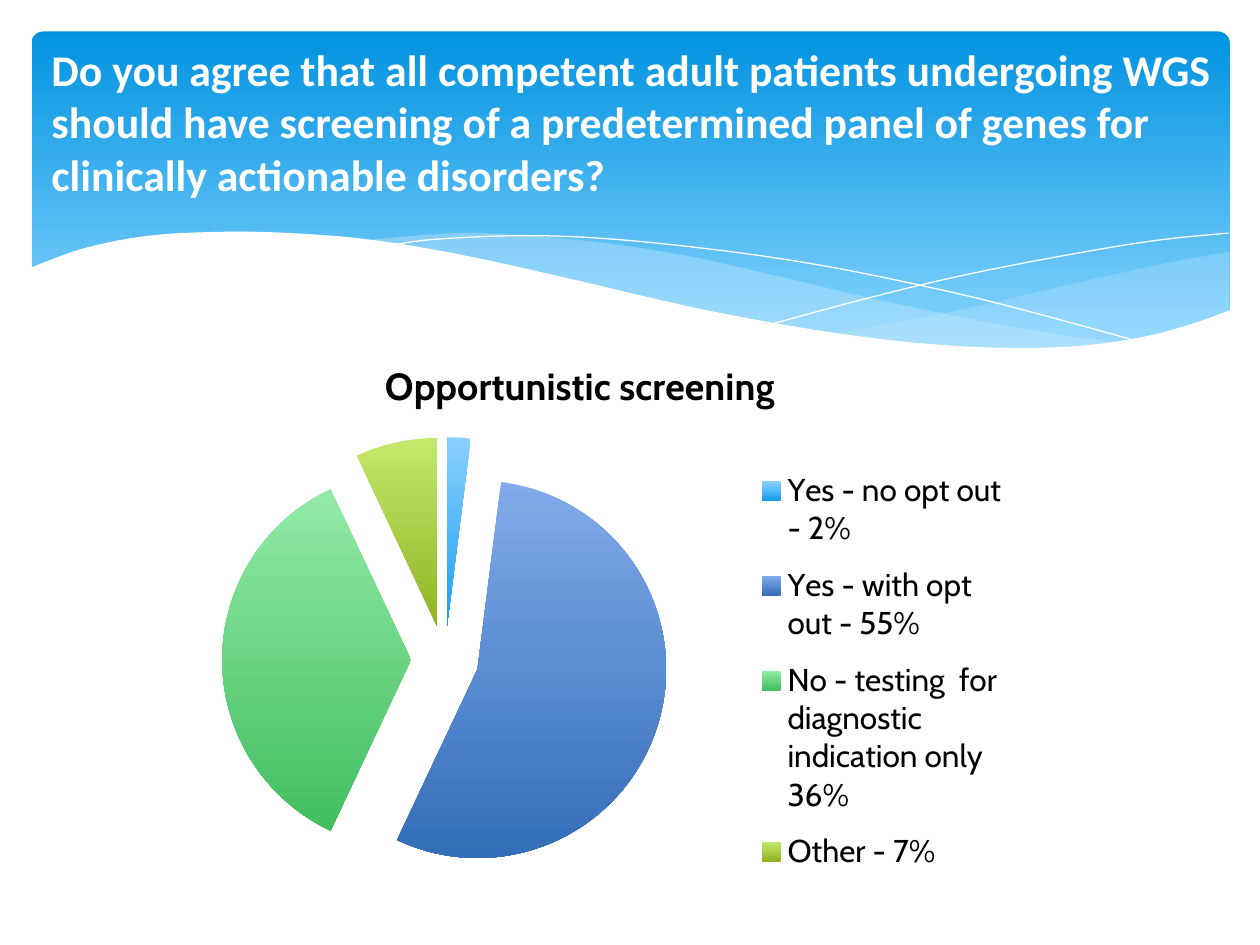
from dataclasses import dataclass

from lxml import etree
from pptx import Presentation
from pptx.chart.chart import Chart
from pptx.chart.data import CategoryChartData
from pptx.dml.color import RGBColor
from pptx.dml.fill import FillFormat
from pptx.enum import chart as charts, shapes, text
from pptx.oxml import parse_xml
from pptx.oxml.ns import nsdecls, qn
from pptx.slide import Slide
from pptx.util import Inches, Pt

Points = tuple[tuple[float, float], ...]


@dataclass(frozen=True)
class Theme:
    white: str = "FFFFFF"
    black: str = "000000"
    mist: str = "C6E7FC"
    banner: tuple[str, str] = ("0293E0", "83D3FE")
    title_font: str = "Calibri"
    chart_font: str = "Cabin"
    title_size: float = 25
    chart_size: float = 18
    chart_title_size: float = 21.6


@dataclass(frozen=True)
class Wave:
    """A smooth band: a curve through the upper knots, then one through the lower."""
    upper: Points
    lower: Points = ()
    colour: str = "FFFFFF"
    opacity: int = 100
    smooth_lower: bool = True


@dataclass(frozen=True)
class Slice:
    label: str
    value: int
    top: str
    bottom: str


THEME = Theme()

WAVES = (
    Wave(((9.76, 2), (9.35, 2.07), (8.61, 2.23), (7.53, 2.48), (6.61, 2.65)),
         ((6.61, 2.65), (7.32, 2.74), (8.14, 2.78), (8.89, 2.72), (9.42, 2.59), (9.76, 2.47)),
         THEME.mist, 29),
    Wave(((8.93, 2.73), (8.07, 2.6), (7.06, 2.4), (6.29, 2.22), (5.55, 2.05), (4.89, 1.94),
          (4.2, 1.87), (3.61, 1.85), (2.86, 1.91)),
         ((2.86, 1.91), (3.62, 2.03), (4.49, 2.22), (5.66, 2.48), (6.65, 2.66), (7.48, 2.76),
          (8.18, 2.78), (8.93, 2.73)),
         THEME.mist, 40),
    Wave(((3.09, 1.95), (3.44, 1.9), (4.16, 1.87), (4.89, 1.9), (5.82, 2), (6.65, 2.13),
          (7.6, 2.33), (8.31, 2.51), (9.07, 2.72))),
    Wave(((6.13, 2.57), (6.95, 2.35), (7.76, 2.16), (8.66, 1.99), (9.24, 1.9), (9.75, 1.85))),
    Wave(((9.77, 2.46), (9.4, 2.59), (8.99, 2.69), (8.5, 2.75), (7.93, 2.76), (7.26, 2.72),
          (6.48, 2.62), (5.55, 2.45), (4.47, 2.2), (3.65, 2.02), (2.92, 1.9), (2.3, 1.85),
          (1.77, 1.84), (1.19, 1.87), (0.67, 1.97), (0.23, 2.13)),
         ((0.23, 3.29), (9.77, 3.29)), smooth_lower=False),
)

CHART_TITLE = "Opportunistic screening"
SLICES = (
    Slice("Yes - no opt out - 2%", 2, "8AD0FF", "18A0EE"),
    Slice("Yes - with opt out - 55%", 55, "80AAEA", "346EB8"),
    Slice("No - testing  for diagnostic indication only 36%", 36, "92EAA6", "42BE60"),
    Slice("Other - 7%", 7, "C3E86C", "8FB423"),
)


def colour(value: str) -> RGBColor:
    return RGBColor.from_string(value)


def smooth(knots: Points, steps: int = 6) -> list[tuple[float, float]]:
    """Sample a Catmull-Rom curve through the knots."""
    padded = (knots[0], *knots, knots[-1])
    samples = [knots[0]]
    for a, b, c, d in zip(padded, padded[1:], padded[2:], padded[3:]):
        for step in range(1, steps + 1):
            t = step / steps
            samples.append(tuple(
                (2 * q + (r - p) * t + (2 * p - 5 * q + 4 * r - s) * t ** 2
                 + (3 * q - p - 3 * r + s) * t ** 3) / 2
                for p, q, r, s in zip(a, b, c, d)))
    return samples


def fill_down(fill: FillFormat, top: str, bottom: str, end: float = 1.0) -> None:
    fill.gradient()
    fill.gradient_angle = 270
    for stop, value, position in zip(fill.gradient_stops, (top, bottom), (0, end)):
        stop.color.rgb = colour(value)
        stop.position = position


def draw_banner(slide: Slide) -> None:
    banner = slide.shapes.add_shape(shapes.MSO_SHAPE.ROUNDED_RECTANGLE,
                                    Inches(0.25), Inches(0.25), Inches(9.51), Inches(2.7))
    banner.adjustments[0] = 0.034
    banner.shadow.inherit = False
    banner.line.fill.background()
    fill_down(banner.fill, *THEME.banner, end=0.9)


def draw_wave(slide: Slide, wave: Wave) -> None:
    lower = smooth(wave.lower) if wave.lower and wave.smooth_lower else list(wave.lower)
    outline = [(Inches(x), Inches(y)) for x, y in smooth(wave.upper) + lower]
    builder = slide.shapes.build_freeform(*outline[0])
    builder.add_line_segments(outline[1:], close=bool(wave.lower))
    shape = builder.convert_to_shape()
    shape.shadow.inherit = False
    if not wave.lower:  # open hairline
        shape.fill.background()
        shape.line.color.rgb = colour(wave.colour)
        shape.line.width = Pt(0)
        return
    shape.line.fill.background()
    shape.fill.solid()
    shape.fill.fore_color.rgb = colour(wave.colour)
    if wave.opacity < 100:
        rgb = shape.fill._xPr.find(".//" + qn("a:srgbClr"))
        etree.SubElement(rgb, qn("a:alpha"), val=str(wave.opacity * 1000))


def draw_title(slide: Slide) -> None:
    box = slide.shapes.add_textbox(Inches(0.31), Inches(0.29), Inches(9.69), Inches(1.36))
    frame = box.text_frame
    frame.word_wrap = True
    frame.auto_size = text.MSO_AUTO_SIZE.SHAPE_TO_FIT_TEXT
    paragraph = frame.paragraphs[0]
    paragraph.text = ("Do you agree that all competent adult patients undergoing WGS should have "
                      "screening of a predetermined panel of genes for clinically actionable "
                      "disorders?")
    paragraph.font.name = THEME.title_font
    paragraph.font.size = Pt(THEME.title_size)
    paragraph.font.bold = True
    paragraph.font.color.rgb = colour(THEME.white)


def place(parent: etree._Element, index: int, target: str,
          x: float, y: float, w: float, h: float) -> None:
    """Give a chart part a fixed place, in fractions of the chart."""
    for old in parent.findall(qn("c:layout")):
        parent.remove(old)
    inner = '<c:layoutTarget val="inner"/>' if target == "inner" else ""
    parent.insert(index, parse_xml(
        f'<c:layout {nsdecls("c")}><c:manualLayout>{inner}'
        '<c:xMode val="edge"/><c:yMode val="edge"/>'
        f'<c:x val="{x}"/><c:y val="{y}"/><c:w val="{w}"/><c:h val="{h}"/>'
        '</c:manualLayout></c:layout>'))


def style_chart(chart: Chart) -> None:
    chart.font.name = THEME.chart_font
    chart.font.size = Pt(THEME.chart_size)
    chart.font.color.rgb = colour(THEME.black)
    chart.has_title = True
    chart.chart_title.text_frame.text = CHART_TITLE
    title_font = chart.chart_title.text_frame.paragraphs[0].font
    title_font.name = THEME.chart_font
    title_font.size = Pt(THEME.chart_title_size)
    title_font.bold = True
    title_font.color.rgb = colour(THEME.black)
    chart.has_legend = True
    chart.legend.position = charts.XL_LEGEND_POSITION.RIGHT
    chart.legend.include_in_layout = False
    place(chart.legend._element, 1, "outer", 0.7, 0.21, 0.29, 0.77)
    place(chart._chartSpace.chart.plotArea, 0, "inner", 0.09, 0.18, 0.51, 0.79)


def draw_chart(slide: Slide) -> None:
    data = CategoryChartData()
    data.categories = [part.label for part in SLICES]
    data.add_series(CHART_TITLE, [part.value for part in SLICES])
    chart = slide.shapes.add_chart(charts.XL_CHART_TYPE.PIE, Inches(1.14), Inches(2.65),
                                   Inches(6.93), Inches(4.5), data).chart
    style_chart(chart)
    plot = chart.plots[0]
    plot.vary_by_categories = True
    series = plot.series[0]
    for index, part in enumerate(SLICES):
        fill_down(series.points[index].format.fill, part.top, part.bottom)
    # Pull the slices apart
    first_point = series._element.find(qn("c:dPt"))
    first_point.addprevious(parse_xml(f'<c:explosion {nsdecls("c")} val="18"/>'))


def main() -> None:
    presentation = Presentation()
    presentation.slide_width, presentation.slide_height = Inches(10), Inches(7.5)
    slide = presentation.slides.add_slide(presentation.slide_layouts[6])
    draw_banner(slide)
    for wave in WAVES:
        draw_wave(slide, wave)
    draw_title(slide)
    draw_chart(slide)
    presentation.save("out.pptx")


if __name__ == "__main__":
    main()
